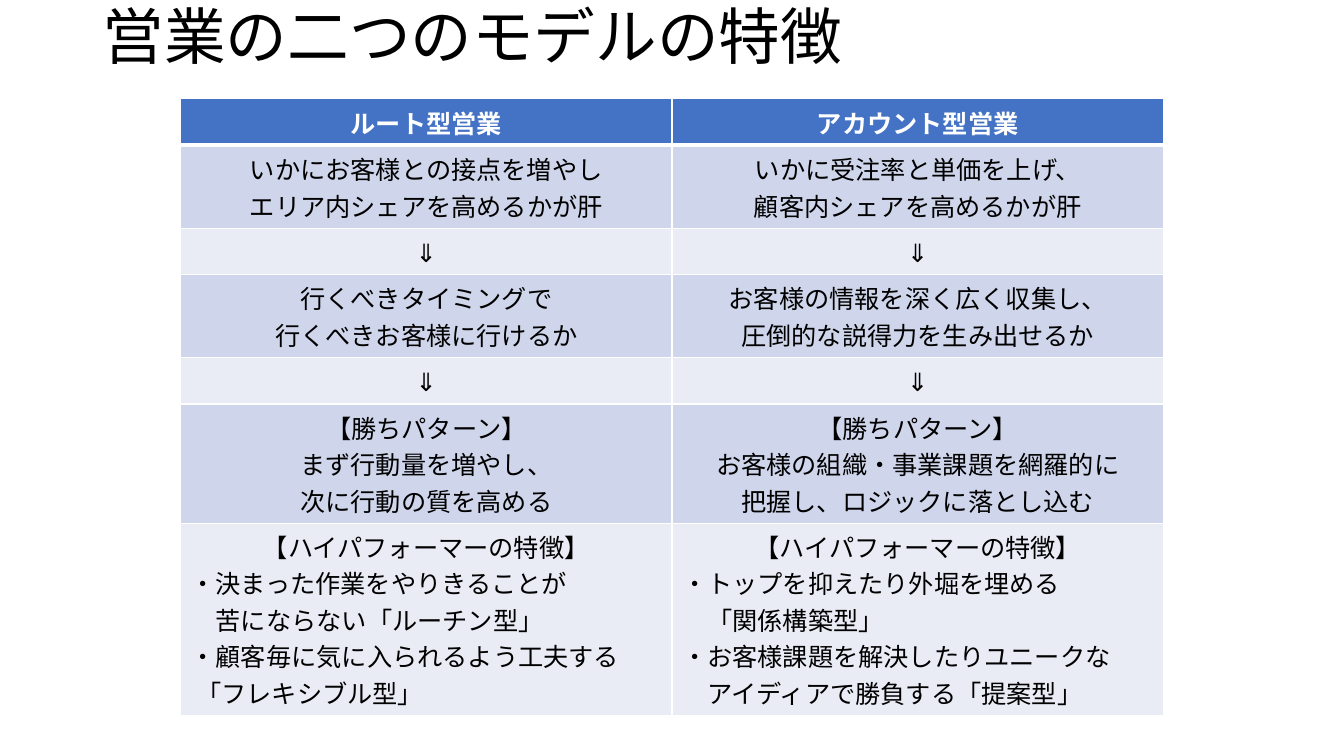
from dataclasses import dataclass
from lxml.etree import SubElement
from pptx import Presentation
from pptx.dml.color import RGBColor as RGB
from pptx.enum.text import MSO_ANCHOR as Anchor, PP_ALIGN as Align
from pptx.oxml.ns import qn
from pptx.util import Inches, Pt


@dataclass(frozen=True)
class Theme:
    font: str = "Noto Sans CJK JP"
    title_size: int = 44
    body_size: int = 18
    body_line: int = 26
    text: str = "000000"
    white: str = "FFFFFF"
    header: str = "4472C4"
    bands: tuple = ("E9EBF5", "CFD5EA")
    rule: int = 1
    header_rule: int = 3


THEME = Theme()
TITLE = "営業の二つのモデルの特徴"
HEADERS = ("ルート型営業", "アカウント型営業")
ARROWS = (["⇓"], ["⇓"])
WINNING = "【勝ちパターン】"
PERFORMERS = "【ハイパフォーマーの特徴】"
FOCUS = (
    ["いかにお客様との接点を増やし\vエリア内シェアを高めるかが肝"],
    ["いかに受注率と単価を上げ、\v顧客内シェアを高めるかが肝"],
)
ACTIONS = (
    ["行くべきタイミングで\v行くべきお客様に行けるか"],
    ["お客様の情報を深く広く収集し、", "圧倒的な説得力を生み出せるか"],
)
PATTERNS = (
    [WINNING, "まず行動量を増やし、\v次に行動の質を高める"],
    [WINNING, "お客様の組織・事業課題を網羅的に\v把握し、ロジックに落とし込む"],
)
TRAITS = (
    [PERFORMERS, "・決まった作業をやりきることが\v　苦にならない「ルーチン型」\v"
                 "・顧客毎に気に入られるよう工夫する\v 「フレキシブル型」"],
    [PERFORMERS, "・トップを抑えたり外堀を埋める\v　「関係構築型」\v"
                 "・お客様課題を解決したりユニークな\v　アイディアで勝負する「提案型」"],
)
ROWS = (tuple([h] for h in HEADERS), FOCUS, ARROWS, ACTIONS, ARROWS, PATTERNS, TRAITS)


def write(p, text, size=THEME.body_size, color=THEME.text, bold=False,
          align=Align.CENTER, spacing=None):
    p.text = text
    p.alignment = align
    p.line_spacing = spacing
    for r in p.runs:
        r.font.name = THEME.font
        r.font.size = Pt(size)
        r.font.bold = bold
        r.font.color.rgb = RGB.from_string(color)
        SubElement(r.font._element, qn("a:ea"), typeface=THEME.font)


def set_borders(cell, row):
    tc_pr = cell._tc.get_or_add_tcPr()
    widths = {
        "L": THEME.rule,
        "R": THEME.rule,
        "T": THEME.header_rule if row == 1 else THEME.rule,
        "B": THEME.header_rule if row == 0 else THEME.rule,
    }
    for side, width in widths.items():
        ln = SubElement(tc_pr, qn(f"a:ln{side}"), w=str(Pt(width)))
        fill = SubElement(ln, qn("a:solidFill"))
        SubElement(fill, qn("a:srgbClr"), val=THEME.white)


def add_title(s, x, y, w, h):
    tf = s.shapes.add_textbox(Inches(x), Inches(y), Inches(w), Inches(h)).text_frame
    tf.word_wrap = True
    tf.vertical_anchor = Anchor.MIDDLE
    write(tf.paragraphs[0], TITLE, size=THEME.title_size, align=Align.LEFT, spacing=0.9)


def fill_cell(cell, row, paragraphs):
    is_header = row == 0
    set_borders(cell, row)
    cell.fill.solid()
    color = THEME.header if is_header else THEME.bands[row % 2]
    cell.fill.fore_color.rgb = RGB.from_string(color)
    cell.vertical_anchor = Anchor.MIDDLE
    tf = cell.text_frame
    for i, text in enumerate(paragraphs):
        p = tf.add_paragraph() if i else tf.paragraphs[0]
        write(p, text, color=THEME.white if is_header else THEME.text, bold=is_header,
              align=Align.LEFT if text.startswith("・") else Align.CENTER)


def row_height(contents, margins=0.1):
    lines = max(len("\v".join(paragraphs).split("\v")) for paragraphs in contents)
    return Inches(margins) + lines * Pt(THEME.body_line)


def add_comparison(s, x, y, w, h):
    table = s.shapes.add_table(len(ROWS), len(HEADERS),
                               Inches(x), Inches(y), Inches(w), Inches(h)).table
    for row, contents in enumerate(ROWS):
        table.rows[row].height = row_height(contents)
        for col, paragraphs in enumerate(contents):
            fill_cell(table.cell(row, col), row, paragraphs)


def main():
    prs = Presentation()
    prs.slide_width, prs.slide_height = Inches(13.33), Inches(7.5)
    s = prs.slides.add_slide(prs.slide_layouts[6])
    add_title(s, 0.92, 0, 11.5, 0.79)
    add_comparison(s, 1.79, 0.98, 9.75, 6.12)
    prs.save("out.pptx")


if __name__ == "__main__":
    main()
